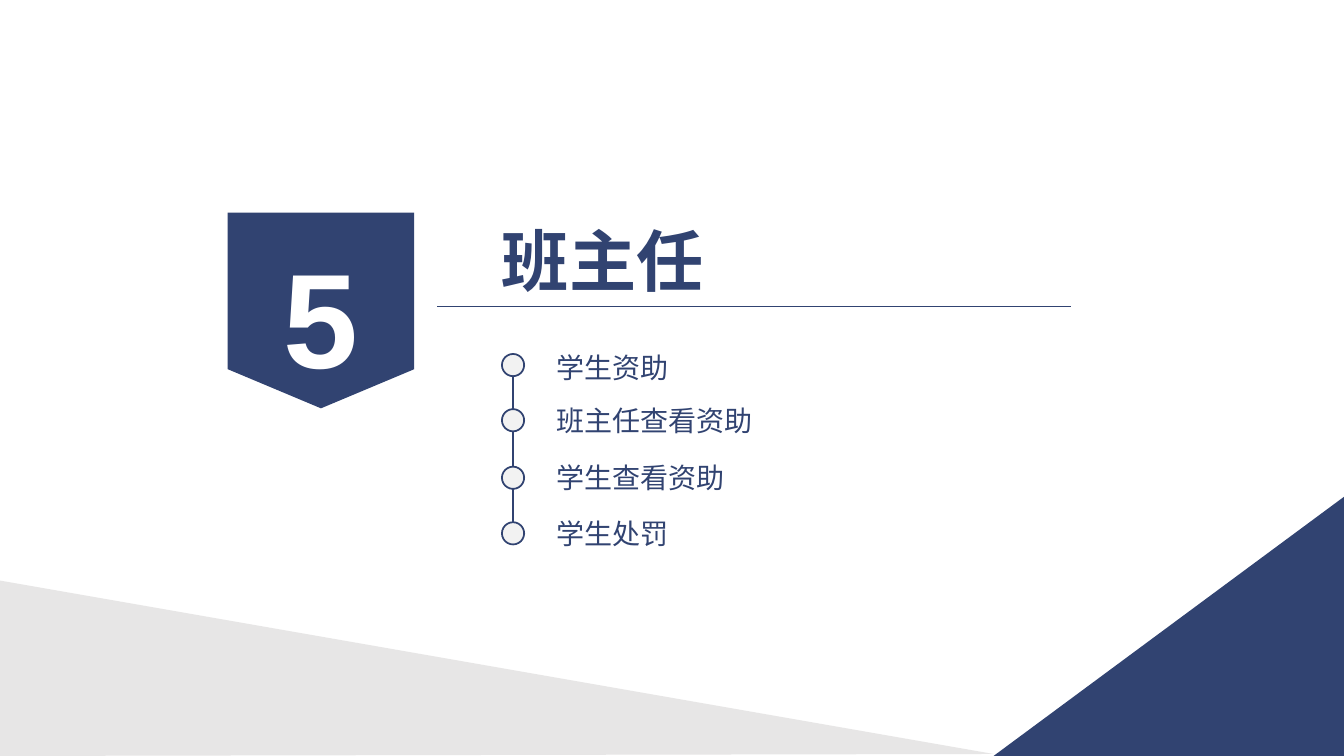
"""Build the section slide for the class teacher chapter."""
from dataclasses import dataclass

from lxml import etree
from pptx import Presentation
from pptx.dml.color import RGBColor
from pptx.enum import shapes, text
from pptx.oxml import ns
from pptx.util import Cm, Pt

NAVY, GREY, PALE, WHITE = "314371", "E7E6E6", "F2F2F2", "FFFFFF"
CJK = "Noto Sans CJK SC"
DOT_LEFT, DOT_SIZE = 12.65, 0.56
DOT_CENTRE = DOT_LEFT + DOT_SIZE / 2


@dataclass
class Topic:
    label: str
    dot_top: float
    text_top: float


@dataclass
class Corner:
    points: list[tuple[float, float]]
    fill: str


TOPICS = [
    Topic("学生资助", 8.92, 8.66),
    Topic("班主任查看资助", 10.31, 9.98),
    Topic("学生查看资助", 11.76, 11.43),
    Topic("学生处罚", 13.16, 12.83),
]
CORNERS = [
    Corner([(0, 19.05), (0, 14.63), (25.04, 19.0)], GREY),
    Corner([(33.87, 19.05), (33.87, 12.52), (25.04, 19.05)], NAVY),
]


def rgb(value: str) -> RGBColor:
    return RGBColor.from_string(value)


def paint(sp, fill: str, line: str = "") -> None:
    sp.shadow.inherit = False
    sp.fill.solid()
    sp.fill.fore_color.rgb = rgb(fill)
    if line:
        sp.line.color.rgb = rgb(line)
        sp.line.width = Pt(1.25)
    else:
        sp.line.fill.background()


def write(tf, label: str, size: int, font: str, color: str, bold: bool = False):
    p = tf.paragraphs[0]
    p.add_run().text = label
    p.font.size, p.font.bold, p.font.name = Pt(size), bold, font
    p.font.color.rgb = rgb(color)
    props = p._p.pPr.find(ns.qn("a:defRPr"))
    etree.SubElement(props, ns.qn("a:ea")).set("typeface", font)
    return p


def add_line(s, start: tuple[float, float], end: tuple[float, float], width: float) -> None:
    line = s.shapes.add_connector(
        shapes.MSO_CONNECTOR.STRAIGHT, *map(Cm, start + end))
    line.line.color.rgb = rgb(NAVY)
    line.line.width = Pt(width)
    etree.SubElement(line._element.spPr, ns.qn("a:effectLst"))


def add_corner(s, corner: Corner) -> None:
    points = [(Cm(x), Cm(y)) for x, y in corner.points]
    builder = s.shapes.build_freeform(*points[0])
    builder.add_line_segments(points[1:])
    paint(builder.convert_to_shape(), corner.fill)


def add_badge(s, number: str) -> None:
    sp = s.shapes.add_shape(
        shapes.MSO_SHAPE.FLOWCHART_OFFPAGE_CONNECTOR,
        Cm(5.74), Cm(5.36), Cm(4.7), Cm(4.93))
    paint(sp, NAVY)
    tf = sp.text_frame
    tf.vertical_anchor = text.MSO_ANCHOR.MIDDLE
    p = write(tf, number, 96, "Arial", WHITE, True)
    p.alignment = text.PP_ALIGN.CENTER
    p.line_spacing = 1.3


def add_title(s, title: str) -> None:
    tf = s.shapes.add_textbox(Cm(12.4), Cm(5.41), Cm(5.59), Cm(2.31)).text_frame
    tf.word_wrap = False
    tf.auto_size = text.MSO_AUTO_SIZE.SHAPE_TO_FIT_TEXT
    write(tf, title, 48, CJK, NAVY, True)


def add_topic(s, topic: Topic) -> None:
    dot = s.shapes.add_shape(
        shapes.MSO_SHAPE.OVAL,
        Cm(DOT_LEFT), Cm(topic.dot_top), Cm(DOT_SIZE), Cm(DOT_SIZE))
    paint(dot, PALE, NAVY)
    tf = s.shapes.add_textbox(
        Cm(13.69), Cm(topic.text_top), Cm(8.89), Cm(1.19)).text_frame
    tf.word_wrap = True
    tf.auto_size = text.MSO_AUTO_SIZE.SHAPE_TO_FIT_TEXT
    tf.margin_left = tf.margin_right = Cm(0.33)
    tf.margin_top = tf.margin_bottom = Cm(0.18)
    write(tf, topic.label, 20, CJK, NAVY)


def main() -> None:
    prs = Presentation()
    prs.slide_width, prs.slide_height = Cm(33.87), Cm(19.05)
    s = prs.slides.add_slide(prs.slide_layouts[6])
    for corner in CORNERS:
        add_corner(s, corner)
    add_badge(s, "5")
    add_line(s, (11.02, 7.72), (27, 7.72), 1)
    add_title(s, "班主任")
    add_line(s, (DOT_CENTRE, TOPICS[0].dot_top + DOT_SIZE),
             (DOT_CENTRE, TOPICS[-1].dot_top), 1.25)
    for topic in TOPICS:
        add_topic(s, topic)
    prs.save("out.pptx")


if __name__ == "__main__":
    main()
